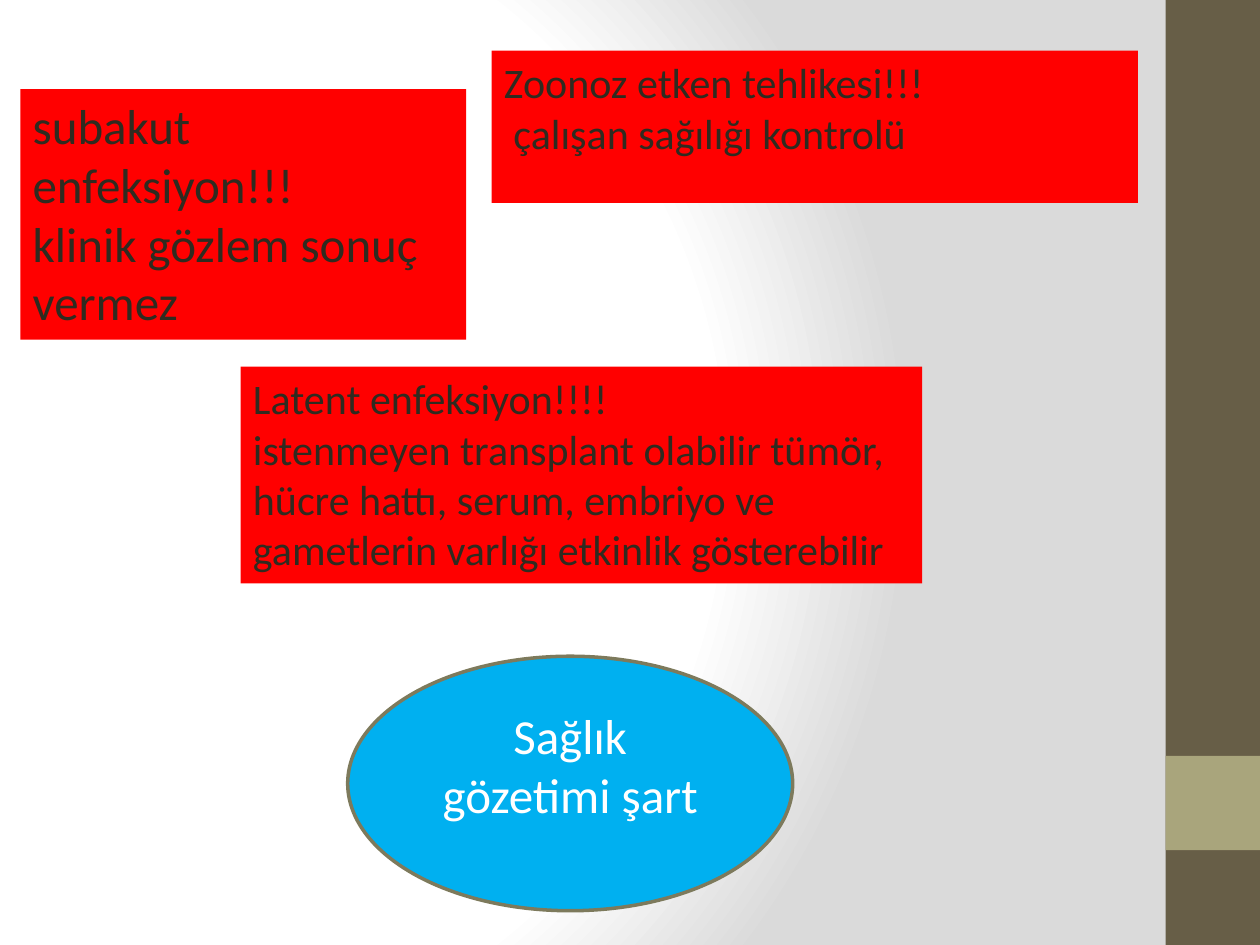
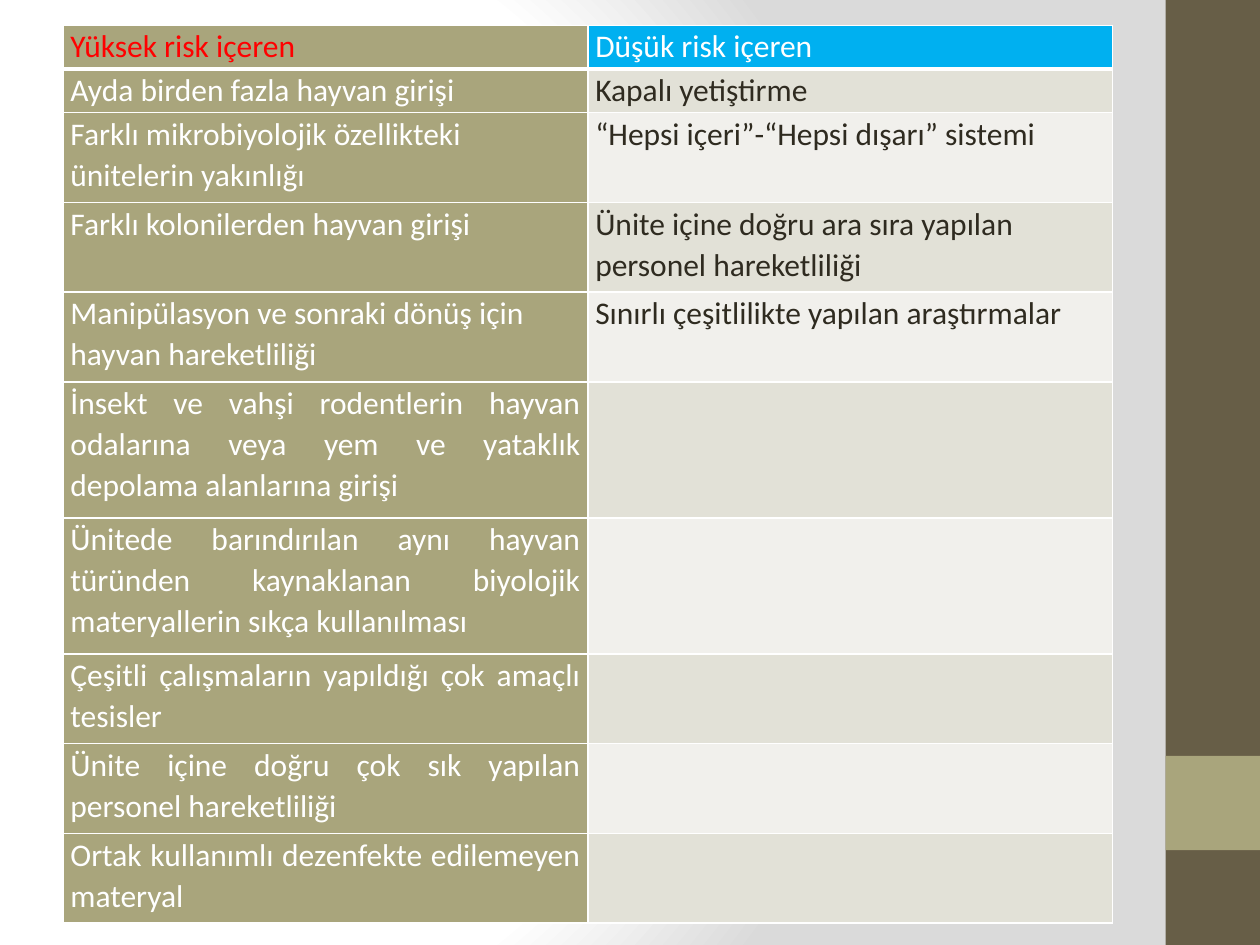
from dataclasses import dataclass
from typing import Optional

from lxml import etree
from pptx import Presentation
from pptx import util as u
from pptx.dml import color as dml
from pptx.enum import shapes, text
from pptx.oxml import ns, parse_xml

COLORS = {
    "white": "FFFFFF",
    "shade": "DADADA",
    "band": "675E47",
    "accent": "A9A57C",
    "ink": "2F2B20",
    "red": "FF0000",
    "blue": "00B0F0",
    "outline": "7D7A5C",
    "stripe_dark": "E2E1D7",
    "stripe_light": "F1F0EC",
}
FONT = "Calibri"
RECT = shapes.MSO_SHAPE.RECTANGLE
OVAL = shapes.MSO_SHAPE.OVAL
LEFT, CENTER, JUSTIFY = text.PP_ALIGN.LEFT, text.PP_ALIGN.CENTER, text.PP_ALIGN.JUSTIFY
ROW_HEIGHTS = {1: 0.88, 2: 1.81, 3: 2.74}
COLUMN_WIDTH = 10.58


@dataclass(frozen=True)
class Block:
    left: float
    top: float
    width: float
    height: float
    fill: str
    words: str = ""
    size: int = 24
    ink: str = "ink"
    kind: shapes.MSO_SHAPE = RECT
    outline: Optional[str] = None
    align: text.PP_ALIGN = LEFT
    anchor: text.MSO_ANCHOR = text.MSO_ANCHOR.TOP
    bottom_inset: float = 0.13


@dataclass(frozen=True)
class RiskRow:
    high: str
    low: str = ""
    lines: int = 2
    align: text.PP_ALIGN = LEFT


BANDS = [
    Block(23.5, 0, 1.9, 19.05, "band"),
    Block(23.5, 15.24, 1.9, 1.9, "accent"),
]

WARNINGS = [
    Block(0.41, 1.8, 8.99, 5.05, "red",
          "subakut enfeksiyon!!!\nklinik gözlem sonuç vermez", size=28),
    Block(4.85, 7.39, 13.74, 4.37, "red",
          "Latent enfeksiyon!!!!\nistenmeyen transplant olabilir tümör, hücre hattı, "
          "serum, embriyo ve gametlerin varlığı etkinlik gösterebilir"),
    Block(9.91, 1.02, 13.03, 3.07, "red",
          "Zoonoz etken tehlikesi!!!\n çalışan sağılığı kontrolü"),
    Block(7.01, 13.23, 8.97, 5.13, "blue", "Sağlık gözetimi şart", size=28,
          ink="white", kind=OVAL, outline="outline", align=CENTER,
          anchor=text.MSO_ANCHOR.MIDDLE, bottom_inset=0.89),
]

RISKS = [
    RiskRow("Yüksek risk içeren", "Düşük risk içeren", lines=1),
    RiskRow("Ayda birden fazla hayvan girişi", "Kapalı yetiştirme", lines=1),
    RiskRow("Farklı mikrobiyolojik özellikteki ünitelerin yakınlığı",
            "“Hepsi içeri”-“Hepsi dışarı” sistemi"),
    RiskRow("Farklı kolonilerden hayvan girişi",
            "Ünite içine doğru ara sıra yapılan personel hareketliliği"),
    RiskRow("Manipülasyon ve sonraki dönüş için hayvan hareketliliği",
            "Sınırlı çeşitlilikte yapılan araştırmalar"),
    RiskRow("İnsekt ve vahşi rodentlerin hayvan odalarına veya yem ve yataklık "
            "depolama alanlarına girişi", lines=3, align=JUSTIFY),
    RiskRow("Ünitede barındırılan aynı hayvan türünden kaynaklanan biyolojik "
            "materyallerin sıkça kullanılması", lines=3, align=JUSTIFY),
    RiskRow("Çeşitli çalışmaların yapıldığı çok amaçlı tesisler", align=JUSTIFY),
    RiskRow("Ünite içine doğru çok sık yapılan personel hareketliliği", align=JUSTIFY),
    RiskRow("Ortak kullanımlı dezenfekte edilemeyen materyal", align=JUSTIFY),
]


def rgb(name: str) -> dml.RGBColor:
    return dml.RGBColor.from_string(COLORS[name])


def paint(fill, name: str) -> None:
    fill.solid()
    fill.fore_color.rgb = rgb(name)


def write_text(frame, words: str, *, size: int = 18, ink: str = "ink",
               align: text.PP_ALIGN = LEFT, spacing: float = 1.0) -> None:
    frame.word_wrap = True
    frame.text = words
    for paragraph in frame.paragraphs:
        paragraph.alignment = align
        paragraph.line_spacing = spacing
        paragraph.font.name = FONT
        paragraph.font.size = u.Pt(size)
        paragraph.font.color.rgb = rgb(ink)


def draw_block(slide, block: Block) -> None:
    box = (block.left, block.top, block.width, block.height)
    shape = slide.shapes.add_shape(block.kind, *map(u.Cm, box))
    shape.shadow.inherit = False
    paint(shape.fill, block.fill)
    if block.outline:
        paint(shape.line.fill, block.outline)
        shape.line.width = u.Pt(2)
    else:
        shape.line.fill.background()
    if block.words:
        frame = shape.text_frame
        frame.vertical_anchor = block.anchor
        frame.margin_bottom = u.Cm(block.bottom_inset)
        write_text(frame, block.words, size=block.size, ink=block.ink, align=block.align)


def set_background(master) -> None:
    master.background.fill.gradient()
    gradient = master.element.find(".//" + ns.qn("a:gradFill"))
    stops = "".join(
        f'<a:gs pos="{place * 1000}"><a:srgbClr val="{COLORS[name]}"/></a:gs>'
        for place, name in ((0, "white"), (75, "white"), (100, "shade")))
    gradient.getparent().replace(gradient, parse_xml(
        f'<a:gradFill {ns.nsdecls("a")} rotWithShape="1"><a:gsLst>{stops}</a:gsLst>'
        '<a:path path="circle"><a:fillToRect l="20000" t="50000" r="100000" b="50000"/>'
        '</a:path></a:gradFill>'))


def set_borders(cell, bottom: int) -> None:
    properties = cell._tc.get_or_add_tcPr()
    for index, (side, points) in enumerate((("L", 1), ("R", 1), ("T", 1), ("B", bottom))):
        line = etree.Element(ns.qn(f"a:ln{side}"), w=str(u.Pt(points)))
        solid = etree.SubElement(line, ns.qn("a:solidFill"))
        etree.SubElement(solid, ns.qn("a:srgbClr"), val=COLORS["white"])
        properties.insert(index, line)


def fill_cell(cell, words: str, fill: str, ink: str, align: text.PP_ALIGN,
              bottom: int) -> None:
    cell.margin_left = cell.margin_right = u.Cm(0.15)
    cell.margin_top = cell.margin_bottom = 0
    paint(cell.fill, fill)
    set_borders(cell, bottom)
    write_text(cell.text_frame, words, ink=ink, align=align, spacing=1.07)


def draw_risk_table(slide, risks: list[RiskRow]) -> None:
    heights = [ROW_HEIGHTS[risk.lines] for risk in risks]
    table = slide.shapes.add_table(
        len(risks), 2, u.Cm(1.27), u.Cm(0.51),
        u.Cm(2 * COLUMN_WIDTH), u.Cm(sum(heights))).table
    for column in table.columns:
        column.width = u.Cm(COLUMN_WIDTH)
    for index, (risk, height) in enumerate(zip(risks, heights)):
        table.rows[index].height = u.Cm(height)
        header = index == 0
        bottom = 3 if header else 1
        stripe = "stripe_dark" if index % 2 else "stripe_light"
        fill_cell(table.cell(index, 0), risk.high, "accent",
                  "red" if header else "white", risk.align, bottom)
        fill_cell(table.cell(index, 1), risk.low, "blue" if header else stripe,
                  "white" if header else "ink", LEFT, bottom)


def add_slide(deck):
    slide = deck.slides.add_slide(deck.slide_layouts[6])
    for band in BANDS:
        draw_block(slide, band)
    return slide


def main() -> None:
    deck = Presentation()
    deck.slide_width, deck.slide_height = u.Cm(25.4), u.Cm(19.05)
    set_background(deck.slide_master)
    warning_slide = add_slide(deck)
    for warning in WARNINGS:
        draw_block(warning_slide, warning)
    draw_risk_table(add_slide(deck), RISKS)
    deck.save("out.pptx")


if __name__ == "__main__":
    main()
